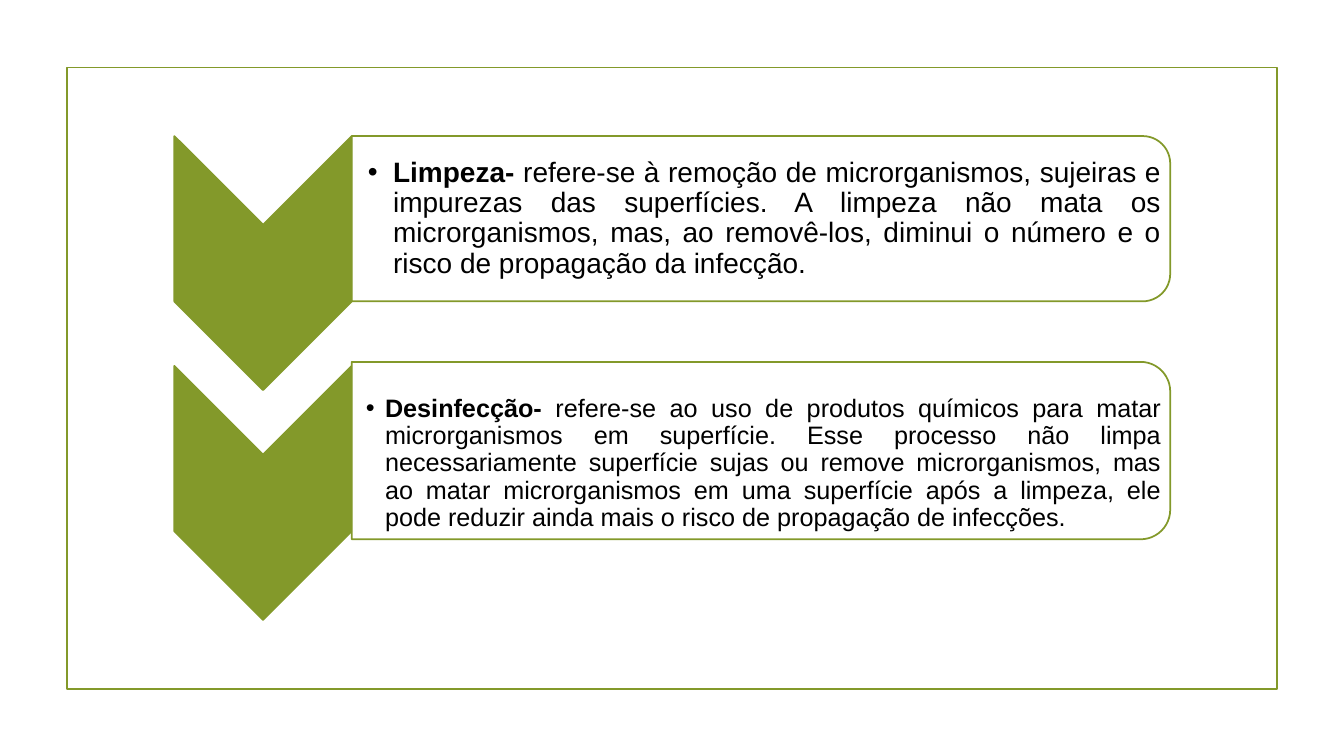
from lxml.etree import SubElement
from pptx import Presentation
from pptx.dml.color import RGBColor
from pptx.enum.shapes import MSO_SHAPE
from pptx.enum.text import MSO_ANCHOR, MSO_AUTO_SIZE, PP_ALIGN
from pptx.oxml.ns import qn
from pptx.util import Inches, Pt


def color(hex_code):
    return RGBColor.from_string(hex_code)


class DefinitionSlide:
    """Holds the style and the slide; boxes are left, top, width, height in % of the slide."""
    GREEN, WHITE, BLACK = "83992A", "FFFFFF", "000000"
    FONT = "Arial"

    def __init__(self, deck):
        self.deck = deck
        self.slide = deck.slides.add_slide(deck.slide_layouts[3])
        heading, *self.bodies = self.slide.placeholders
        heading.element.getparent().remove(heading.element)

    def place(self, box):
        sides = (self.deck.slide_width, self.deck.slide_height) * 2
        return [round(share * side / 100) for share, side in zip(box, sides)]

    def outline(self, kind, box, fill=None, turned=False):
        """Adds a green-edged shape; a turned one fills its box after a quarter turn."""
        left, top, width, height = self.place(box)
        if turned:
            left, top = left + (width - height) // 2, top + (height - width) // 2
            width, height = height, width
        shape = self.slide.shapes.add_shape(kind, left, top, width, height)
        shape.rotation = 90 if turned else 0
        shape.shadow.inherit = False
        shape.line.color.rgb = color(self.GREEN)
        shape.line.width = Pt(1.25)
        if fill:
            shape.fill.solid()
            shape.fill.fore_color.rgb = color(fill)
        else:
            shape.fill.background()
        return shape

    def frame(self, box):
        self.outline(MSO_SHAPE.RECTANGLE, box)

    def chevron(self, box):
        self.outline(MSO_SHAPE.CHEVRON, box, self.GREEN, turned=True)

    def panel(self, box):
        panel = self.outline(MSO_SHAPE.ROUND_2_SAME_RECTANGLE, box, self.WHITE, turned=True)
        tint = panel.element.spPr.find(qn("a:solidFill"))[0]
        SubElement(tint, qn("a:alpha"), val="90000")

    def definition(self, body, box, term, meaning, size, indent, inset):
        body.left, body.top, body.width, body.height = self.place(box)
        self.slide.shapes.element.append(body.element)  # in front of its panel
        frame = body.text_frame
        frame.word_wrap = True
        frame.auto_size = MSO_AUTO_SIZE.NONE
        frame.vertical_anchor = MSO_ANCHOR.MIDDLE
        frame.margin_left = Inches(inset)
        frame.margin_top = frame.margin_right = frame.margin_bottom = Inches(0.01)
        entry = frame.paragraphs[0]
        properties = entry._p.get_or_add_pPr()
        properties.set("marL", str(Inches(indent)))
        properties.set("indent", str(-Inches(indent)))
        SubElement(properties, qn("a:buChar"), char="•")
        entry.alignment = PP_ALIGN.JUSTIFY
        entry.line_spacing = 0.9
        entry.space_before = Pt(0)
        entry.font.name = self.FONT
        entry.font.size = Pt(size)
        entry.font.color.rgb = color(self.BLACK)
        for words, bold in ((term, True), (meaning, False)):
            run = entry.add_run()
            run.text = words
            run.font.bold = bold


CHEVRON_LEFT, CHEVRON_WIDTH, CHEVRON_HEIGHT = 12.97, 13.2, 33.6
PANEL_LEFT, PANEL_WIDTH, TEXT_WIDTH = CHEVRON_LEFT + CHEVRON_WIDTH, 60.9, 60.3
FIRST_TOP, STEP = 18, 30.4

# term, meaning, panel (top, height), text (top, height), size, indent, inset
DEFINITIONS = [
    ("Limpeza-",
     " refere-se à remoção de microrganismos, sujeiras e impurezas das superfícies. "
     "A limpeza não mata os microrganismos, mas, ao removê-los, diminui o número e o "
     "risco de propagação da infecção.",
     (18, 21.87), (19.07, 19.73), 20, 0.25, 0.16),
    ("Desinfecção- ",
     "refere-se ao uso de produtos químicos para matar microrganismos em superfície. "
     "Esse processo não limpa necessariamente superfície sujas ou remove "
     "microrganismos, mas ao matar microrganismos em uma superfície após a limpeza, "
     "ele pode reduzir ainda mais o risco de propagação de infecções.",
     (47.87, 23.47), (52.4, 17.87), 18, 0.19, 0.14),
]


def main():
    deck = Presentation()
    deck.slide_width, deck.slide_height = Inches(13.33), Inches(7.5)
    page = DefinitionSlide(deck)
    page.frame((5, 8.93, 90, 82.27))
    for row, (body, definition) in enumerate(zip(page.bodies, DEFINITIONS)):
        term, meaning, (panel_top, panel_height), (text_top, text_height), *style = definition
        page.chevron((CHEVRON_LEFT, FIRST_TOP + row * STEP, CHEVRON_WIDTH, CHEVRON_HEIGHT))
        page.panel((PANEL_LEFT, panel_top, PANEL_WIDTH, panel_height))
        page.definition(body, (PANEL_LEFT, text_top, TEXT_WIDTH, text_height),
                        term, meaning, *style)
    deck.save("out.pptx")


if __name__ == "__main__":
    main()
